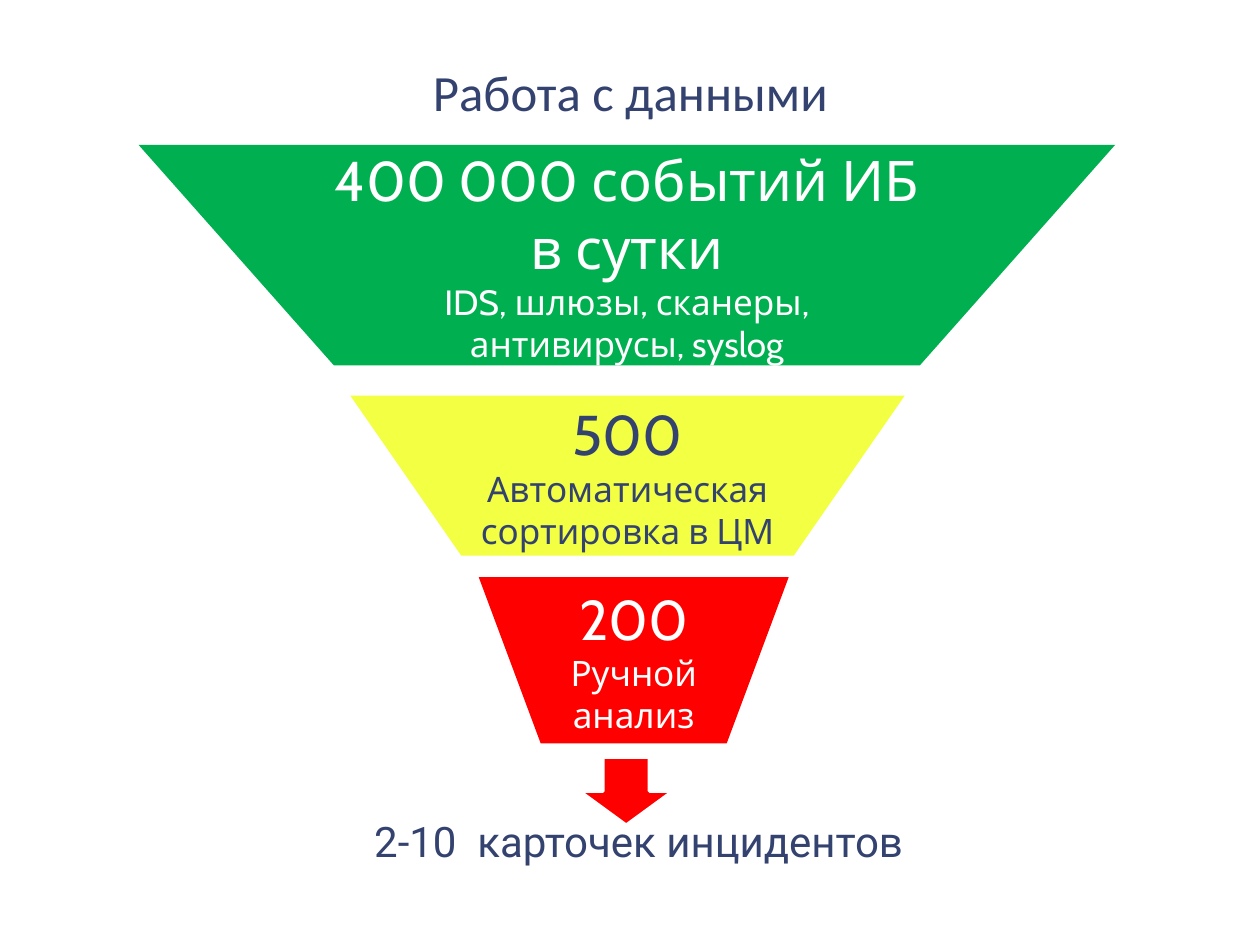
from pptx import Presentation
from pptx.dml.color import RGBColor
from pptx.enum.shapes import MSO_SHAPE
from pptx.enum.text import MSO_ANCHOR, PP_ALIGN
from pptx.util import Pt

THEME = {
    "navy": "34426F", "white": "FFFFFF", "green": "00B050",
    "yellow": "F2FF43", "red": "FF0000",
    "title": 29, "figure": 32, "label": 20, "result": 24,
}

STAGES = [
    ((79.2, 82.8, 558, 126), "green", "white",
     "400 000 событий ИБ в сутки", "IDS, шлюзы, сканеры, антивирусы, syslog"),
    ((200.2, 226.1, 316.8, 91.4), "yellow", "navy",
     "500", "Автоматическая сортировка в ЦМ"),
    ((273.6, 329.8, 177.1, 95), "red", "white", "200", "Ручной анализ"),
]
NOTES = [
    ((219.6, 20.9, 281.5, 62.6), "Работа с данными", "title", "Calibri"),
    ((188.6, 449.3, 352.8, 62.6), "2-10  карточек инцидентов", "result", "Roboto"),
]
ARROW = (331.2, 432.7, 53.3, 38.9)


def tint(name):
    """Return a theme colour."""
    return RGBColor.from_string(THEME[name])


def write(shape, lines, face, ink):
    """Fill a shape with centred lines of (text, size name)."""
    frame = shape.text_frame
    frame.word_wrap = True
    frame.vertical_anchor = MSO_ANCHOR.MIDDLE
    for i, (text, size) in enumerate(lines):
        para = frame.add_paragraph() if i else frame.paragraphs[0]
        para.text = text
        para.alignment = PP_ALIGN.CENTER
        para.font.name = face
        para.font.size = Pt(THEME[size])
        para.font.color.rgb = tint(ink)
    return frame


def draw(slide, kind, box, fill):
    """Add a flat filled shape without an outline."""
    shape = slide.shapes.add_shape(kind, *map(Pt, box))
    shape.shadow.inherit = False
    shape.fill.solid()
    shape.fill.fore_color.rgb = tint(fill)
    shape.line.fill.background()
    return shape


def main():
    """Build the data funnel slide."""
    deck = Presentation()
    deck.slide_width, deck.slide_height = Pt(720), Pt(540)
    slide = deck.slides.add_slide(deck.slide_layouts[6])

    for box, fill, ink, figure, label in STAGES:
        stage = draw(slide, MSO_SHAPE.FLOWCHART_MANUAL_OPERATION, box, fill)
        lines = [(figure, "figure"), (label, "label")]
        frame = write(stage, lines, "Cabin", ink)
        frame.margin_left = frame.margin_right = Pt(0)
        frame.margin_top = frame.margin_bottom = Pt(5.76)

    for box, text, size, face in NOTES:
        note = slide.shapes.add_textbox(*map(Pt, box))
        write(note, [(text, size)], face, "navy")

    arrow = draw(slide, MSO_SHAPE.DOWN_ARROW, ARROW, "red")
    arrow.line.color.rgb = tint("white")
    arrow.line.width = Pt(2)

    deck.save("out.pptx")


if __name__ == "__main__":
    main()
